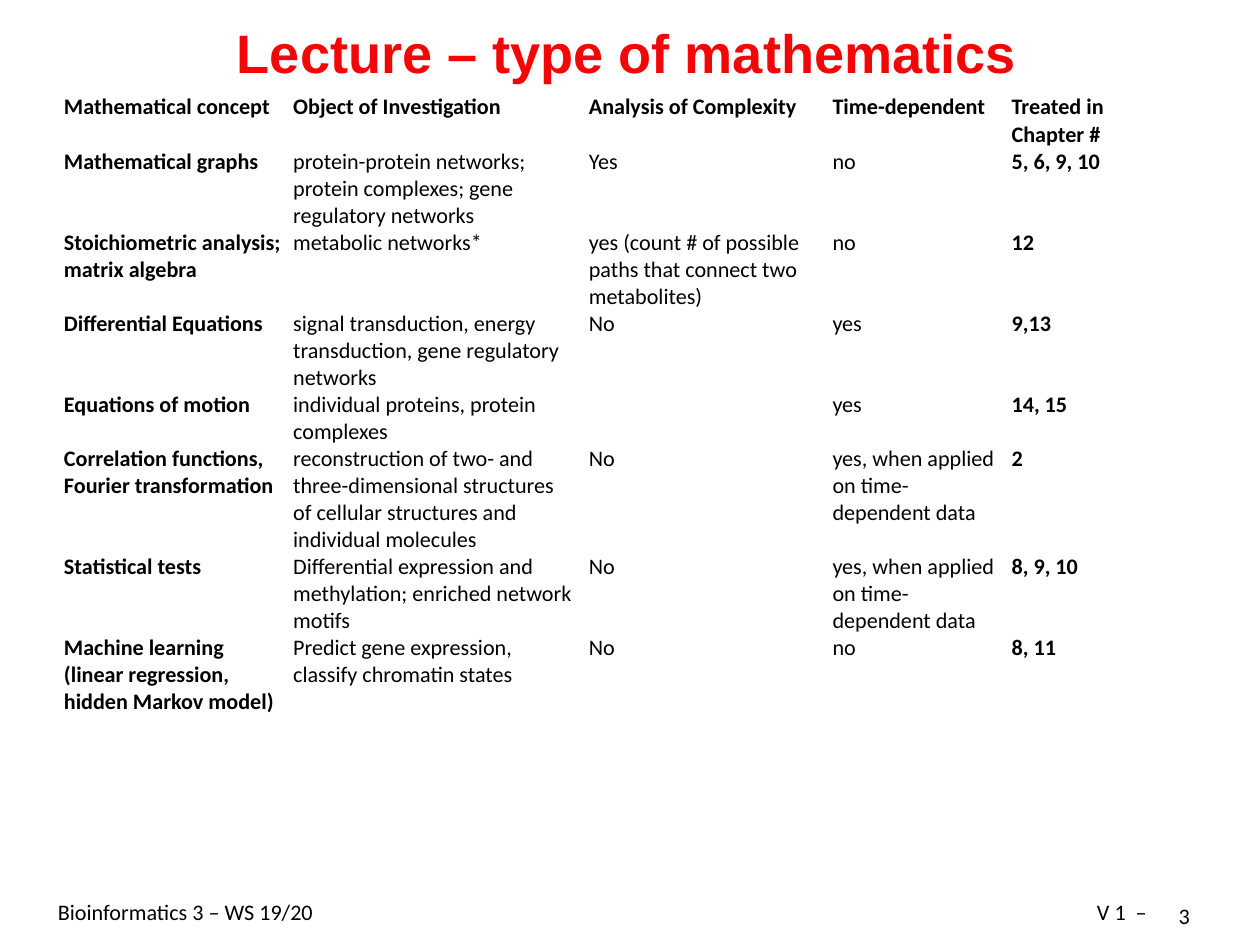
from pptx import Presentation
from pptx.dml.color import RGBColor
from pptx.enum import text
from pptx.util import Pt


def colour(code):
    return RGBColor.from_string(code)


def style(para, size=18, name="Calibri", code="000000", bold=False, align=text.PP_ALIGN.LEFT):
    para.alignment = align
    para.font.size = Pt(size)
    para.font.name = name
    para.font.bold = bold
    para.font.color.rgb = colour(code)


deck = Presentation()
deck.slide_width, deck.slide_height = Pt(1024), Pt(768)
page = deck.slides.add_slide(deck.slide_layouts[5])

title = page.shapes.title
title.left, title.top, title.width, title.height = Pt(71), Pt(6.5), Pt(877), Pt(71)
frame = title.text_frame
frame.text = "Lecture – type of mathematics"
frame.vertical_anchor = text.MSO_ANCHOR.MIDDLE
frame.margin_left = frame.margin_right = frame.margin_top = frame.margin_bottom = 0
style(frame.paragraphs[0], 44, "Arial", "F30608", True, text.PP_ALIGN.CENTER)

footers = [
    ("Bioinformatics 3 – WS 19/20", 47, 730, 392, text.PP_ALIGN.LEFT),
    ("V 1  –", 838, 730, 94, text.PP_ALIGN.RIGHT),
    ("3", 953, 733.5, 19, text.PP_ALIGN.CENTER),
]
for words, left, top, width, align in footers:
    box = page.shapes.add_textbox(Pt(left), Pt(top), Pt(width), Pt(22))
    frame = box.text_frame
    frame.word_wrap = True
    frame.margin_left = frame.margin_right = frame.margin_top = frame.margin_bottom = 0
    frame.text = words
    style(frame.paragraphs[0], align=align)

rows = [
    (2, "Mathematical concept", "Object of Investigation", "Analysis of Complexity",
     "Time-dependent", "Treated in\nChapter #"),
    (3, "Mathematical graphs", "protein-protein networks; protein complexes; gene regulatory networks",
     "Yes", "no", "5, 6, 9, 10"),
    (3, "Stoichiometric analysis; matrix algebra", "metabolic networks*",
     "yes (count # of possible paths that connect two metabolites)", "no", "12"),
    (3, "Differential Equations", "signal transduction, energy transduction, gene regulatory networks",
     "No", "yes", "9,13"),
    (2, "Equations of motion", "individual proteins, protein complexes", "", "yes", "14, 15"),
    (4, "Correlation functions, Fourier transformation",
     "reconstruction of two- and three-dimensional structures of cellular structures and individual molecules",
     "No", "yes, when applied on time-dependent data", "2"),
    (3, "Statistical tests", "Differential expression and methylation; enriched network motifs",
     "No", "yes, when applied on time-dependent data", "8, 9, 10"),
    (3, "Machine learning (linear regression, hidden Markov model)",
     "Predict gene expression, classify chromatin states", "No", "no", "8, 11"),
]
widths = [186.3, 240.3, 198, 145.6, 154]
line_height = 21.96
table_height = line_height * sum(row[0] for row in rows)
table = page.shapes.add_table(
    len(rows), len(widths), Pt(47), Pt(76.3), Pt(sum(widths)), Pt(table_height)
).table
table.horz_banding = False
for column, width in zip(table.columns, widths):
    column.width = Pt(width)

for row_index, (lines, *entries) in enumerate(rows):
    table.rows[row_index].height = Pt(line_height * lines)
    for column_index, entry in enumerate(entries):
        cell = table.cell(row_index, column_index)
        cell.fill.solid()
        cell.fill.fore_color.rgb = colour("FFFFFF")
        cell.margin_left = cell.margin_right = Pt(5)
        cell.margin_top = cell.margin_bottom = 0
        cell.text = entry
        header = row_index == 0
        justified = header and column_index in (0, 3, 4)
        for para in cell.text_frame.paragraphs:
            style(para, bold=header or column_index in (0, 4),
                  align=text.PP_ALIGN.JUSTIFY if justified else text.PP_ALIGN.LEFT)

deck.save("out.pptx")
